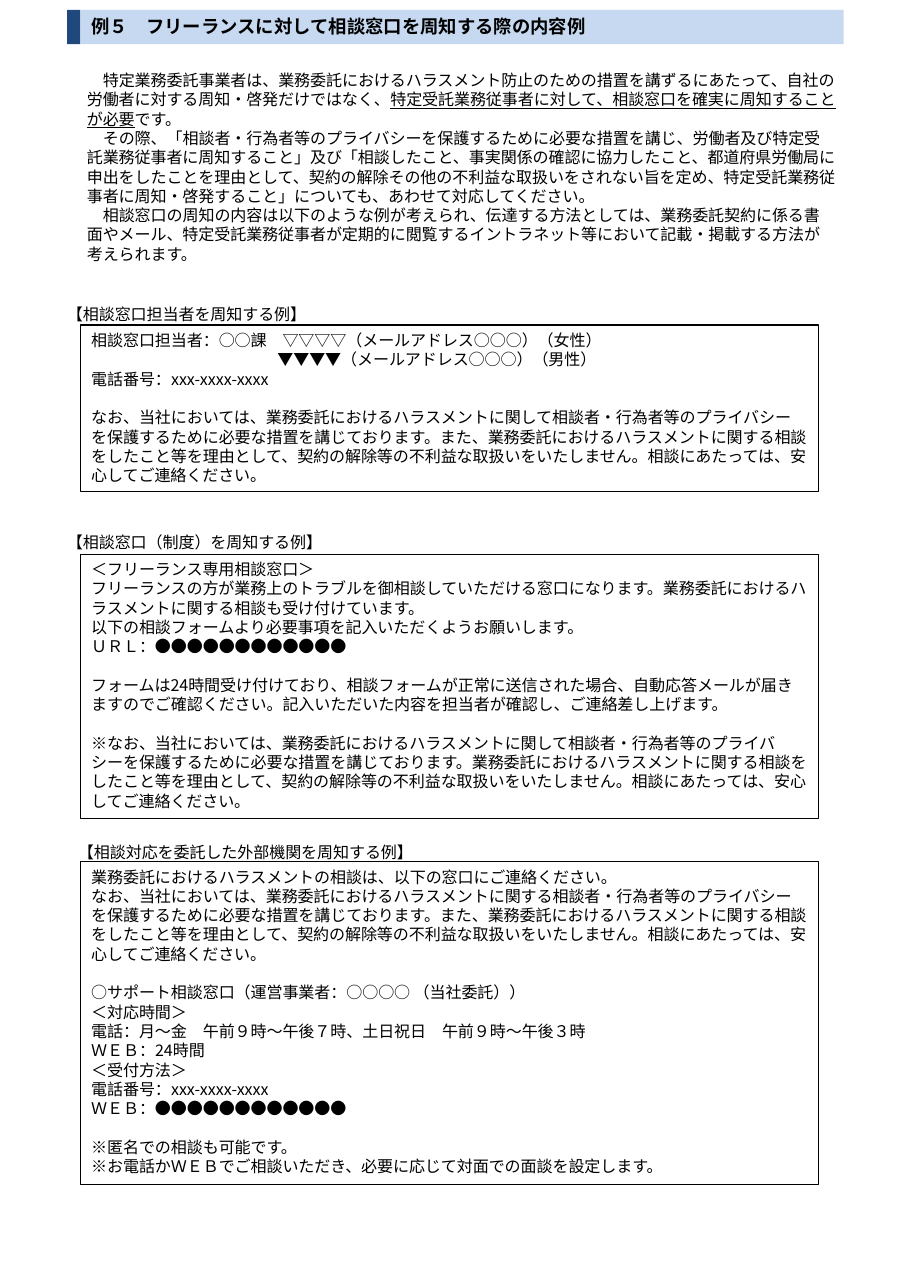
from dataclasses import dataclass

from lxml import etree
from pptx import Presentation
from pptx.dml.color import RGBColor
from pptx.enum.shapes import MSO_SHAPE
from pptx.enum.text import MSO_ANCHOR, PP_ALIGN
from pptx.oxml.ns import qn
from pptx.util import Inches, Pt

RECTANGLE = MSO_SHAPE.RECTANGLE
TOP = MSO_ANCHOR.TOP
LEFT = PP_ALIGN.LEFT

FONT = "Noto Sans CJK JP"
BODY_SIZE = 10.5
TITLE_SIZE = 12
LINE_RATIO = 1.2
COLORS = {"text": "000000", "accent": "1F497D", "band": "C6D9F1", "border": "000000"}


@dataclass
class Line:
    text: str
    gap: bool = False
    margin: float = 0
    first_indent: float = 0
    underlined: str = ""


def color(name):
    return RGBColor.from_string(COLORS[name])


def write_lines(frame, lines, size=BODY_SIZE, bold=False):
    frame.word_wrap = True
    frame.vertical_anchor = TOP
    for index, line in enumerate(lines):
        paragraph = frame.paragraphs[0] if index == 0 else frame.add_paragraph()
        paragraph.alignment = LEFT
        paragraph.line_spacing = Pt(size * LINE_RATIO)
        if line.gap:
            paragraph.space_before = Pt(size * LINE_RATIO)
        font = paragraph.font
        font.name, font.size, font.bold = FONT, Pt(size), bold
        font.color.rgb = color("text")
        properties = paragraph._p.get_or_add_pPr()
        properties.set("marL", str(Inches(line.margin)))
        properties.set("indent", str(Pt(line.first_indent)))
        east_asian = etree.SubElement(properties.find(qn("a:defRPr")), qn("a:ea"))
        east_asian.set("typeface", FONT)
        if line.underlined:
            before, after = line.text.split(line.underlined)
            paragraph.add_run().text = before
            emphasis = paragraph.add_run()
            emphasis.text = line.underlined
            emphasis.font.underline = True
            paragraph.add_run().text = after
        else:
            paragraph.add_run().text = line.text


def add_rectangle(slide, left, top, width, height, fill=None):
    rectangle = slide.shapes.add_shape(
        RECTANGLE, Inches(left), Inches(top), Inches(width), Inches(height))
    rectangle.shadow.inherit = False
    if fill:
        rectangle.fill.solid()
        rectangle.fill.fore_color.rgb = color(fill)
        rectangle.line.fill.background()
    else:
        rectangle.fill.background()
        rectangle.line.color.rgb = color("border")
        rectangle.line.width = Pt(0.75)
    return rectangle


def add_text(slide, left, top, width, height, lines, **style):
    box = slide.shapes.add_textbox(
        Inches(left), Inches(top), Inches(width), Inches(height))
    write_lines(box.text_frame, lines, **style)


def add_title_band(slide, left, top, width, height, title):
    accent_width = 0.12
    add_rectangle(slide, left, top, accent_width, height, "accent")
    band_left, band_width = left + accent_width, width - accent_width
    add_rectangle(slide, band_left, top, band_width, height, "band")
    add_text(slide, band_left, top, band_width, height, [Line(title)],
             size=TITLE_SIZE, bold=True)


def add_example(slide, left, top, width, height, heading, heading_offset, lines):
    heading_left, heading_top = heading_offset
    add_text(slide, left + heading_left, top + heading_top, 4.7, 0.28, [Line(heading)])
    notice = add_rectangle(slide, left, top, width, height)
    write_lines(notice.text_frame, lines)


INTRODUCTION = [
    Line("特定業務委託事業者は、業務委託におけるハラスメント防止のための措置を講ずるにあたって、自社の労働者に対する周知・啓発だけではなく、特定受託業務従事者に対して、相談窓口を確実に周知することが必要です。",
         first_indent=BODY_SIZE,
         underlined="特定受託業務従事者に対して、相談窓口を確実に周知することが必要"),
    Line("その際、「相談者・行為者等のプライバシーを保護するために必要な措置を講じ、労働者及び特定受託業務従事者に周知すること」及び「相談したこと、事実関係の確認に協力したこと、都道府県労働局に申出をしたことを理由として、契約の解除その他の不利益な取扱いをされない旨を定め、特定受託業務従事者に周知・啓発すること」についても、あわせて対応してください。",
         first_indent=BODY_SIZE),
    Line("相談窓口の周知の内容は以下のような例が考えられ、伝達する方法としては、業務委託契約に係る書面やメール、特定受託業務従事者が定期的に閲覧するイントラネット等において記載・掲載する方法が考えられます。",
         first_indent=BODY_SIZE),
]

EXAMPLES = [
    (2.95, 1.51, "【相談窓口担当者を周知する例】", (-0.22, -0.24), [
        Line("相談窓口担当者：○○課　▽▽▽▽（メールアドレス○○○）（女性）"),
        Line("▼▼▼▼（メールアドレス○○○）（男性）", margin=1.69),
        Line("電話番号：xxx-xxxx-xxxx"),
        Line("なお、当社においては、業務委託におけるハラスメントに関して相談者・行為者等のプライバシーを保護するために必要な措置を講じております。また、業務委託におけるハラスメントに関する相談をしたこと等を理由として、契約の解除等の不利益な取扱いをいたしません。相談にあたっては、安心してご連絡ください。", gap=True),
    ]),
    (5.03, 2.4, "【相談窓口（制度）を周知する例】", (-0.22, -0.25), [
        Line("＜フリーランス専用相談窓口＞"),
        Line("フリーランスの方が業務上のトラブルを御相談していただける窓口になります。業務委託におけるハラスメントに関する相談も受け付けています。"),
        Line("以下の相談フォームより必要事項を記入いただくようお願いします。"),
        Line("ＵＲＬ：●●●●●●●●●●●●"),
        Line("フォームは24時間受け付けており、相談フォームが正常に送信された場合、自動応答メールが届きますのでご確認ください。記入いただいた内容を担当者が確認し、ご連絡差し上げます。", gap=True),
        Line("※なお、当社においては、業務委託におけるハラスメントに関して相談者・行為者等のプライバシーを保護するために必要な措置を講じております。業務委託におけるハラスメントに関する相談をしたこと等を理由として、契約の解除等の不利益な取扱いをいたしません。相談にあたっては、安心してご連絡ください。", gap=True),
    ]),
    (7.82, 2.93, "【相談対応を委託した外部機関を周知する例】", (-0.12, -0.22), [
        Line("業務委託におけるハラスメントの相談は、以下の窓口にご連絡ください。"),
        Line("なお、当社においては、業務委託におけるハラスメントに関する相談者・行為者等のプライバシーを保護するために必要な措置を講じております。また、業務委託におけるハラスメントに関する相談をしたこと等を理由として、契約の解除等の不利益な取扱いをいたしません。相談にあたっては、安心してご連絡ください。"),
        Line("○サポート相談窓口（運営事業者：○○○○ （当社委託））", gap=True),
        Line("＜対応時間＞"),
        Line("電話：月～金　午前９時～午後７時、土日祝日　午前９時～午後３時"),
        Line("ＷＥＢ：24時間"),
        Line("＜受付方法＞"),
        Line("電話番号：xxx-xxxx-xxxx"),
        Line("ＷＥＢ：●●●●●●●●●●●●"),
        Line("※匿名での相談も可能です。", gap=True),
        Line("※お電話かＷＥＢでご相談いただき、必要に応じて対面での面談を設定します。"),
    ]),
]


def main():
    presentation = Presentation()
    presentation.slide_width = Inches(8.27)
    presentation.slide_height = Inches(11.69)
    slide = presentation.slides.add_slide(presentation.slide_layouts[6])
    add_title_band(slide, 0.61, 0.09, 7.05, 0.31,
                   "例５　フリーランスに対して相談窓口を周知する際の内容例")
    add_text(slide, 0.69, 0.59, 7, 1.87, INTRODUCTION)
    for top, height, heading, heading_offset, lines in EXAMPLES:
        add_example(slide, 0.73, top, 6.7, height, heading, heading_offset, lines)
    presentation.save("out.pptx")


if __name__ == "__main__":
    main()
